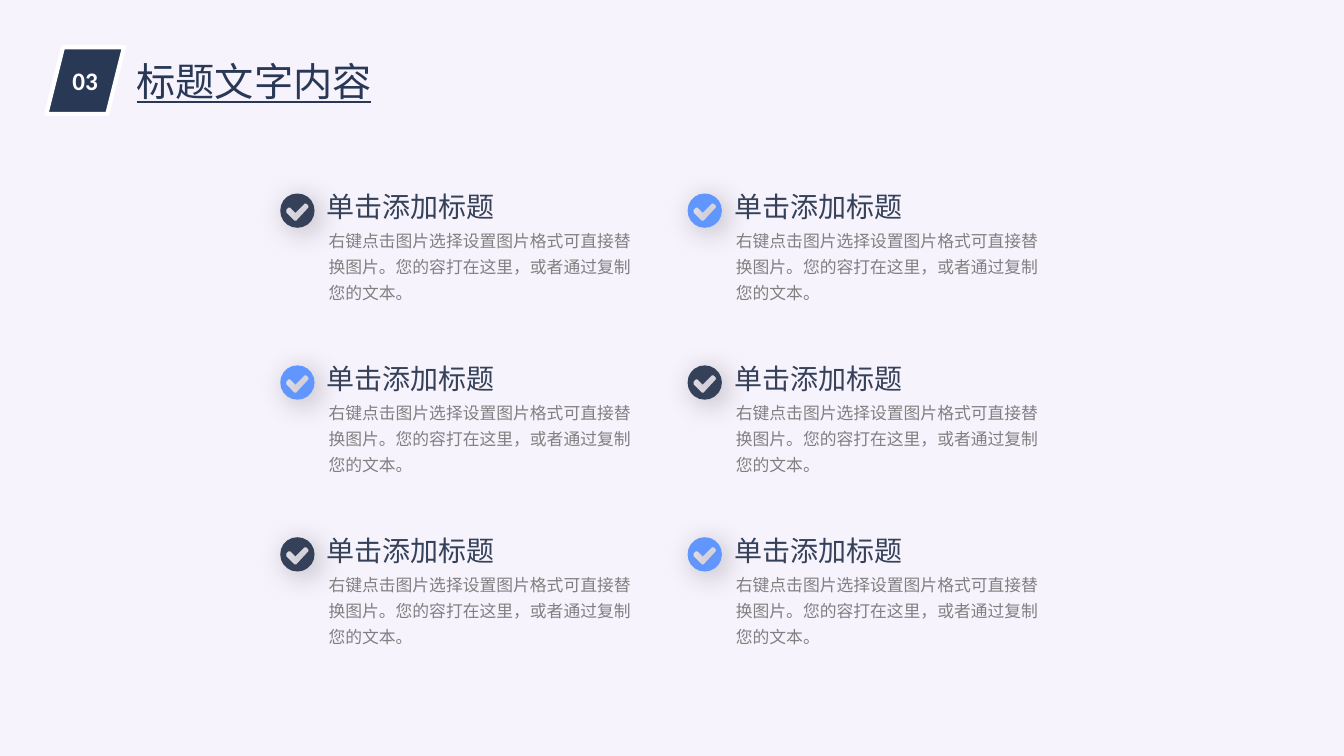
from math import cos, pi, sin
from lxml.etree import SubElement as Sub
from pptx import Presentation
from pptx.dml.color import RGBColor as RGB
from pptx.enum.shapes import MSO_SHAPE as SHAPE
from pptx.enum.text import MSO_ANCHOR as ANCHOR, MSO_AUTO_SIZE as AUTO, PP_ALIGN as ALIGN
from pptx.oxml.ns import qn
from pptx.util import Inches, Pt

THEME = {
    "back": "F7F3FD", "navy": "283855", "slate": "344159", "blue": "6196FF",
    "grey": "808080", "white": "FFFFFF", "shadow": "000000",
    "latin": "Calibri", "cjk": "Noto Sans CJK SC",
    "number": 18, "heading": 28, "item": 20, "body": 12,
}
COLS, ROWS = 2, 3
LEFT, RIGHT = 2.78, 6.82
TOP, BOTTOM = 1.92, 5.33
COL_STEP = (RIGHT - LEFT) / (COLS - 1)
ROW_STEP = (BOTTOM - TOP) / (ROWS - 1)
RADIUS, SIDES = 170, 20
ITEM_TITLE = "单击添加标题"
ITEM_BODY = "右键点击图片选择设置图片格式可直接替换图片。您的容打在这里，或者通过复制您的文本。"
CHECK = [(280, 120), (260, 100), (240, 100), (150, 190), (100, 140), (80, 140),
         (60, 160), (60, 190), (140, 270), (160, 270), (280, 140)]


def add_run(p, text, size, color, font):
    r = p.add_run()
    r.text = text
    r.font.size = Pt(THEME[size])
    r.font.color.rgb = RGB.from_string(THEME[color])
    r.font.name = THEME[font]
    Sub(r.font._element, qn("a:ea"), typeface=THEME[font])
    return r


def add_text(shapes, x, y, w, h, text, size, color, inset=(0.1, 0.05), spacing=None):
    sp = shapes.add_textbox(Inches(x), Inches(y), Inches(w), Inches(h))
    tf = sp.text_frame
    tf.word_wrap = True
    tf.auto_size = AUTO.SHAPE_TO_FIT_TEXT
    tf.margin_left = tf.margin_right = Inches(inset[0])
    tf.margin_top = tf.margin_bottom = Inches(inset[1])
    p = tf.paragraphs[0]
    p.line_spacing = spacing
    return p, add_run(p, text, size, color, "cjk")


prs = Presentation()
prs.slide_width, prs.slide_height = Inches(13.33), Inches(7.5)
s = prs.slides.add_slide(prs.slide_layouts[6])
s.background.fill.solid()
s.background.fill.fore_color.rgb = RGB.from_string(THEME["back"])

sp = s.shapes.add_shape(SHAPE.PARALLELOGRAM, Inches(0.46), Inches(0.47), Inches(0.77), Inches(0.66))
sp.shadow.inherit = False
sp.fill.solid()
sp.fill.fore_color.rgb = RGB.from_string(THEME["navy"])
sp.line.color.rgb = RGB.from_string(THEME["white"])
sp.line.width = Pt(3)
tf = sp.text_frame
tf.vertical_anchor = ANCHOR.MIDDLE
tf.margin_left = tf.margin_right = 0
p = tf.paragraphs[0]
p.alignment = ALIGN.CENTER
r = add_run(p, "03", "number", "white", "latin")
r.font.bold = True

p, r = add_text(s.shapes, 1.235, 0.52, 2.57, 0.57, "标题文字内容", "heading", "navy")
p.alignment = ALIGN.CENTER
r.font.underline = True

angles = [2 * pi * i / SIDES for i in range(SIDES)]
circle = [(RADIUS + RADIUS * cos(a), RADIUS + RADIUS * sin(a)) for a in angles]

for col in range(COLS):
    for row in range(ROWS):
        x, y = LEFT + col * COL_STEP, TOP + row * ROW_STEP
        shapes = s.shapes.add_group_shape().shapes
        outline = shapes.build_freeform(*circle[0], scale=Inches(1) / 1000)
        outline.add_line_segments(circle[1:])
        outline.move_to(*CHECK[0])
        outline.add_line_segments(CHECK[1:])
        sp = outline.convert_to_shape(Inches(x), Inches(y))
        sp.fill.solid()
        sp.fill.fore_color.rgb = RGB.from_string(THEME["blue" if (row + col) % 2 else "slate"])
        sp.line.fill.background()
        sp.shadow.inherit = False
        effects = sp._element.spPr.find(qn("a:effectLst"))
        shadow = Sub(effects, qn("a:outerShdw"), blurRad=str(Pt(20)), dist=str(Pt(5)),
                     dir=str(45 * 60000), algn="tl", rotWithShape="0")
        color = Sub(shadow, qn("a:srgbClr"), val=THEME["shadow"])
        Sub(color, qn("a:alpha"), val="30000")
        add_text(shapes, x + 0.38, y + 0.26, 3.35, 0.89, ITEM_BODY, "body", "grey", spacing=1.3)
        add_text(shapes, x + 0.26, y - 0.24, 3.32, 0.6, ITEM_TITLE, "item", "slate", (0.2, 0.1), 1.3)

prs.save("out.pptx")
